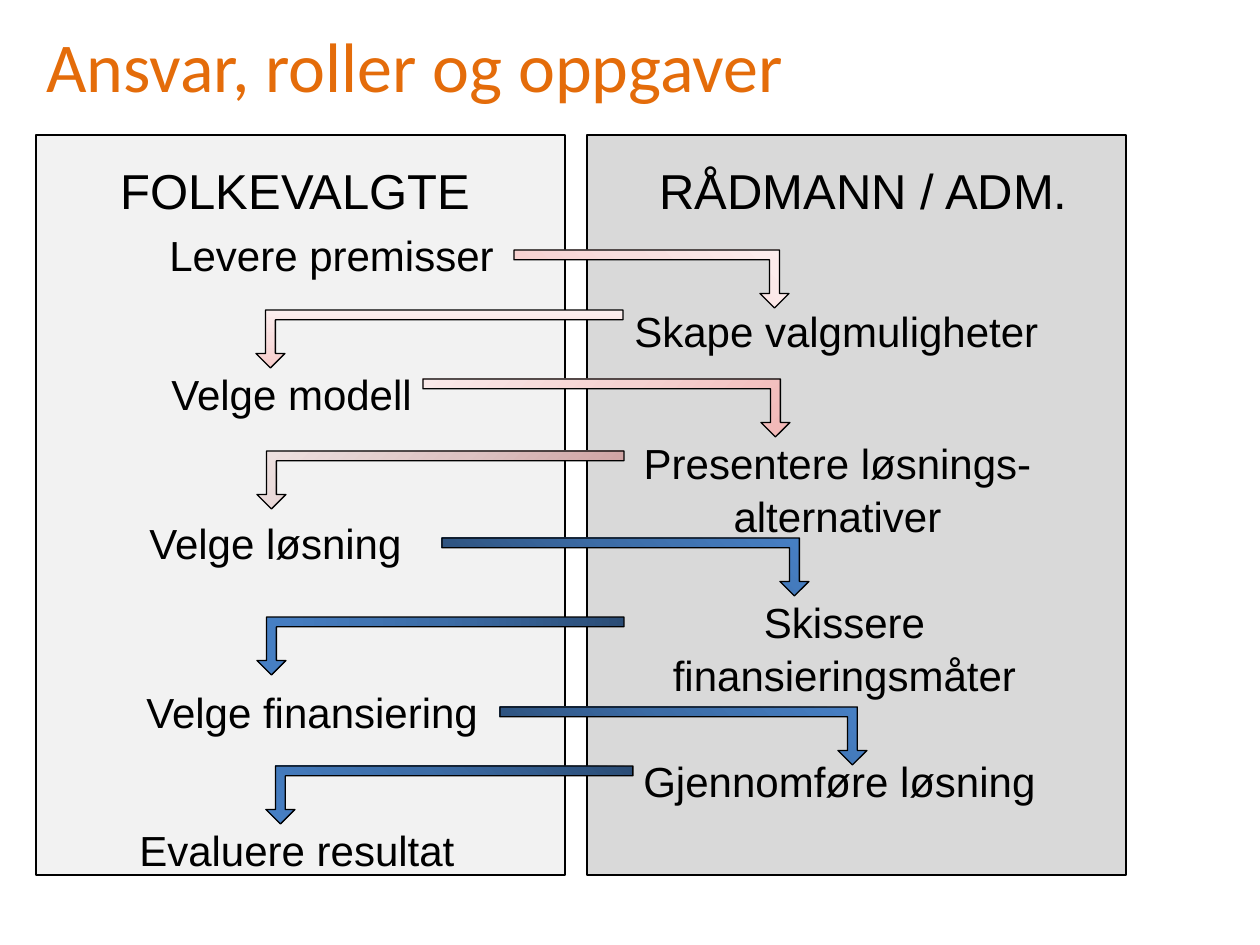
from lxml.etree import SubElement
from pptx import Presentation
from pptx.dml.color import RGBColor
from pptx.enum.shapes import MSO_SHAPE
from pptx.enum.text import MSO_ANCHOR, MSO_AUTO_SIZE, PP_ALIGN
from pptx.oxml.ns import qn
from pptx.util import Pt

PX = 914400 / 126
BLACK = RGBColor(0x00, 0x00, 0x00)
ORANGE = RGBColor(0xE4, 0x6C, 0x0A)
LIGHT_GREY = RGBColor(0xF2, 0xF2, 0xF2)
MID_GREY = RGBColor(0xD9, 0xD9, 0xD9)

ROSE = [RGBColor(0xF2, 0xB7, 0xB6), RGBColor(0xF6, 0xD2, 0xD1), RGBColor(0xFA, 0xE8, 0xE8)]
PINK = [RGBColor(0xF7, 0xCC, 0xCB), RGBColor(0xF9, 0xDE, 0xDE), RGBColor(0xFC, 0xEE, 0xEE)]
DUSTY = [RGBColor(0xCB, 0x9A, 0x9A), RGBColor(0xDD, 0xC2, 0xC2), RGBColor(0xEE, 0xE2, 0xE1)]
BLUE = [RGBColor(0x2A, 0x4C, 0x75), RGBColor(0x3C, 0x6C, 0xA6), RGBColor(0x47, 0x80, 0xC5)]

LEFT, CENTER = PP_ALIGN.LEFT, PP_ALIGN.CENTER
LINE_HEIGHT = 53
ARROW_WIDTH, ARROW_HEIGHT = 367, 58
FROM_LEFT_CORNER = {"l": 0, "t": 100, "r": 100, "b": 0}
FROM_RIGHT_CORNER = {"l": 100, "t": 100, "r": 0, "b": 0}

PANELS = [
    ("FOLKEVALGTE", LIGHT_GREY, (36, 135, 529, 740), (67, 151, 457, 72)),
    ("RÅDMANN / ADM.", MID_GREY, (587, 135, 539, 740), (611, 151, 505, 72)),
]
STEPS = [
    ("Levere premisser", (87, 220, 489, LINE_HEIGHT), CENTER),
    ("Skape valgmuligheter", (622, 296, 489, LINE_HEIGHT), LEFT),
    ("Velge modell", (159, 359, 325, LINE_HEIGHT), LEFT),
    ("Presentere løsnings-alternativer", (593, 428, 489, 96), CENTER),
    ("Velge løsning", (137, 508, 315, LINE_HEIGHT), LEFT),
    ("Skissere finansieringsmåter", (600, 587, 489, 96), CENTER),
    ("Velge finansiering", (134, 677, 489, LINE_HEIGHT), LEFT),
    ("Gjennomføre løsning", (631, 746, 489, LINE_HEIGHT), LEFT),
    ("Evaluere resultat", (127, 815, 489, 64), LEFT),
]
HANDOVERS = [
    (514, 250, 275, PINK, 45),
    (256, 310, ARROW_WIDTH, PINK, 90),
    (423, 379, ARROW_WIDTH, ROSE, 135),
    (257, 451, ARROW_WIDTH, DUSTY, FROM_RIGHT_CORNER),
    (442, 538, ARROW_WIDTH, BLUE, FROM_LEFT_CORNER),
    (257, 617, ARROW_WIDTH, BLUE, 0),
    (500, 707, ARROW_WIDTH, BLUE, FROM_LEFT_CORNER),
    (266, 766, ARROW_WIDTH, BLUE, 315),
]


def emu(*lengths):
    return [round(length * PX) for length in lengths]


def write_text(holder, text, size, font, color, align, spacing):
    frame = holder.text_frame
    frame.word_wrap = True
    frame.auto_size = MSO_AUTO_SIZE.SHAPE_TO_FIT_TEXT
    frame.vertical_anchor = MSO_ANCHOR.TOP
    paragraph = frame.paragraphs[0]
    paragraph.alignment = align
    paragraph.line_spacing = spacing
    run = paragraph.add_run()
    run.text = text
    run.font.size = Pt(size)
    run.font.name = font
    run.font.color.rgb = color


def add_label(slide, text, box, align, size=24, font="Arial", color=BLACK, spacing=1.06):
    label = slide.shapes.add_textbox(*emu(*box))
    write_text(label, text, size, font, color, align, spacing)


def add_shape(slide, preset, box):
    shape = slide.shapes.add_shape(preset, *emu(*box))
    shape.shadow.inherit = False
    shape.line.color.rgb = BLACK
    shape.line.width = Pt(0.75)
    return shape


def add_panel(slide, heading, color, frame_box, heading_box):
    frame = add_shape(slide, MSO_SHAPE.RECTANGLE, frame_box)
    title = add_shape(slide, MSO_SHAPE.RECTANGLE, heading_box)
    title.line.fill.background()
    for part in (frame, title):
        part.fill.solid()
        part.fill.fore_color.rgb = color
    write_text(title, heading, 28, "Arial", BLACK, CENTER, 1.06)


def set_gradient(shape, colors, direction):
    shape.fill.gradient()
    gradient = shape.element.spPr.find(qn("a:gradFill"))
    for child in list(gradient):
        gradient.remove(child)
    gradient.set("rotWithShape", "1")
    stops = SubElement(gradient, qn("a:gsLst"))
    for position, color in zip((0, 50, 100), colors):
        stop = SubElement(stops, qn("a:gs"), pos=str(position * 1000))
        SubElement(stop, qn("a:srgbClr"), val=str(color))
    if isinstance(direction, dict):
        circle = SubElement(gradient, qn("a:path"), {"path": "circle"})
        edges = {side: str(share * 1000) for side, share in direction.items()}
        SubElement(circle, qn("a:fillToRect"), edges)
    else:
        SubElement(gradient, qn("a:lin"), ang=str(direction * 60000), scaled="1")


def add_handover(slide, left, top, width, colors, direction, to_left):
    arrow = add_shape(slide, MSO_SHAPE.BENT_UP_ARROW, (left, top, width, ARROW_HEIGHT))
    for index, ratio in enumerate((0.17, 0.25, 0.25)):
        arrow.adjustments[index] = ratio
    transform = arrow.element.spPr.find(qn("a:xfrm"))
    transform.set("flipV", "1")
    if to_left:
        transform.set("flipH", "1")
    set_gradient(arrow, colors, direction)


def main():
    presentation = Presentation()
    presentation.slide_width, presentation.slide_height = emu(1260, 945)
    slide = presentation.slides.add_slide(presentation.slide_layouts[6])
    for panel in PANELS:
        add_panel(slide, *panel)
    for step in STEPS:
        add_label(slide, *step)
    for index, handover in enumerate(HANDOVERS):
        add_handover(slide, *handover, to_left=index % 2 == 1)
    add_label(slide, "Ansvar, roller og oppgaver", (34, 16, 1111, 97), LEFT,
              size=40, font="Calibri", color=ORANGE, spacing=1.0)
    presentation.save("out.pptx")


if __name__ == "__main__":
    main()
